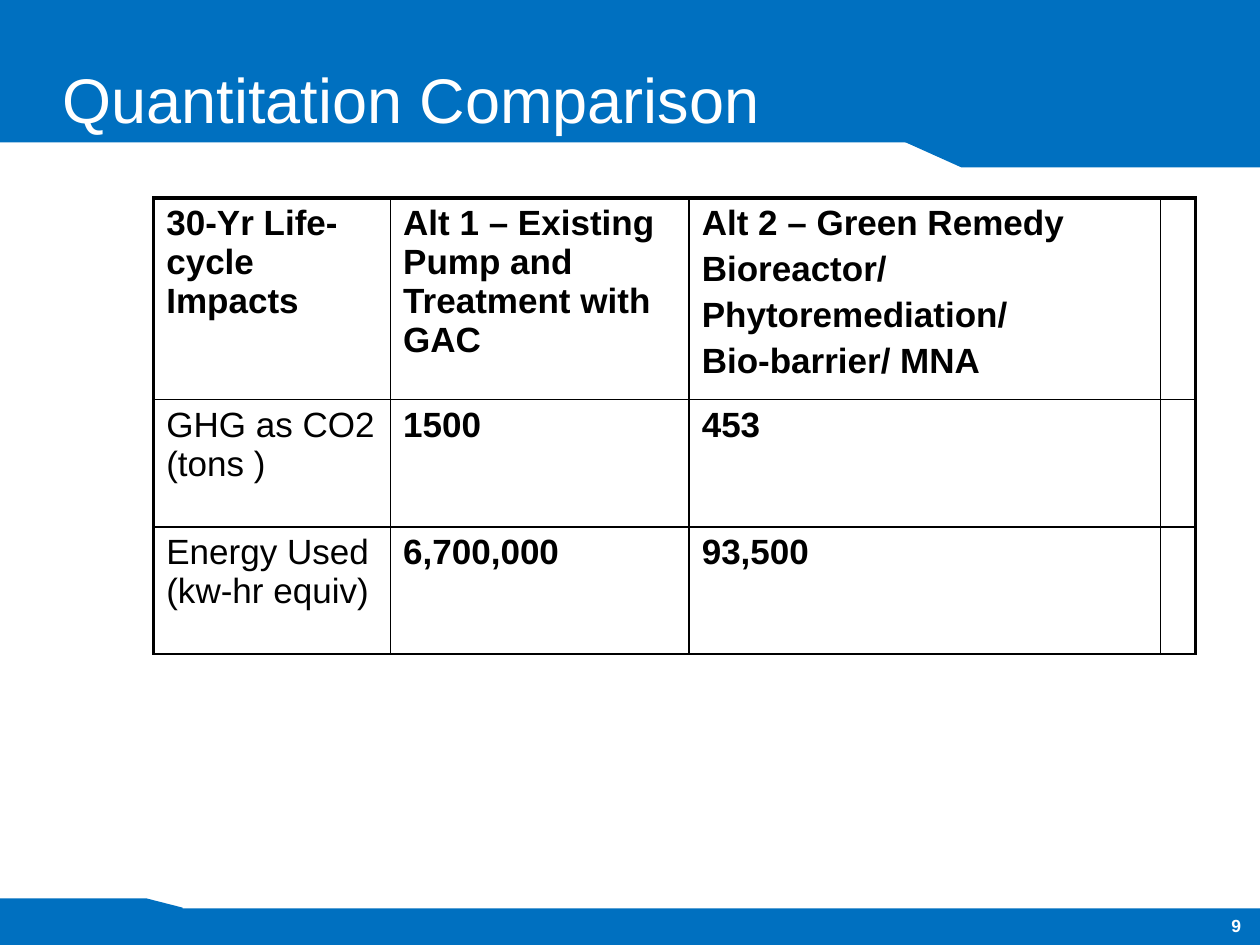
from lxml import etree
from pptx import Presentation
from pptx.dml.color import RGBColor
from pptx.enum.shapes import MSO_SHAPE
from pptx.enum.text import MSO_ANCHOR, PP_ALIGN
from pptx.oxml.ns import qn
from pptx.util import Inches, Pt

COLORS = {"blue": "0070C0", "white": "FFFFFF", "black": "000000"}
THIN, THICK = 1, 2.25

COLUMN_WIDTHS = [1.88, 2.37, 3.74, 0.28]
ROW_HEIGHTS = [1.5, 1.01, 1.01]
ROWS = [
    ["30-Yr Life-cycle Impacts",
     "Alt 1 – Existing Pump and Treatment with GAC",
     "Alt 2 – Green Remedy\nBioreactor/\nPhytoremediation/\nBio-barrier/ MNA", ""],
    ["GHG as CO2 (tons )", "1500", "453", ""],
    ["Energy Used (kw-hr equiv)", "6,700,000", "93,500", ""],
]


class SlideBuilder:
    font = "Arial"

    def __init__(self, slide):
        self.slide = slide

    def color(self, name):
        return RGBColor.from_string(COLORS[name])

    def style(self, p, size, color, bold=False):
        p.font.name = self.font
        p.font.size = Pt(size)
        p.font.bold = bold
        p.font.color.rgb = self.color(color)

    def band(self, kind, x, y, w, h, flip=False, rotation=0):
        sp = self.slide.shapes.add_shape(
            kind, Inches(x), Inches(y), Inches(w), Inches(h))
        sp.shadow.inherit = False
        sp.fill.solid()
        sp.fill.fore_color.rgb = self.color("blue")
        sp.line.fill.background()
        sp.rotation = rotation
        if flip:
            sp._element.spPr.find(qn("a:xfrm")).set("flipV", "1")

    def text(self, text, x, y, w, h, size, bold=False,
             align=PP_ALIGN.LEFT, anchor=MSO_ANCHOR.TOP):
        box = self.slide.shapes.add_textbox(
            Inches(x), Inches(y), Inches(w), Inches(h))
        tf = box.text_frame
        tf.word_wrap = True
        tf.vertical_anchor = anchor
        tf.margin_left = tf.margin_right = tf.margin_top = tf.margin_bottom = 0
        p = tf.paragraphs[0]
        p.text = text
        p.alignment = align
        self.style(p, size, "white", bold)

    def border(self, cell, side, width):
        tc_pr = cell._tc.get_or_add_tcPr()
        ln = etree.SubElement(tc_pr, qn(f"a:ln{side}"), w=str(Pt(width)))
        fill = etree.SubElement(ln, qn("a:solidFill"))
        etree.SubElement(fill, qn("a:srgbClr"), val=COLORS["black"])

    def cell(self, cell, text, bold, widths):
        for side, width in widths.items():
            self.border(cell, side, width)
        cell.fill.background()
        cell.text = text
        for i, p in enumerate(cell.text_frame.paragraphs):
            self.style(p, 20, "black", bold)
            if i:
                p.space_before = Pt(4)

    def table(self, rows, x, y, widths, heights):
        table = self.slide.shapes.add_table(
            len(rows), len(widths), Inches(x), Inches(y),
            Inches(sum(widths)), Inches(sum(heights))).table
        table.first_row = table.horz_banding = False
        for column, width in zip(table.columns, widths):
            column.width = Inches(width)
        for row, height in zip(table.rows, heights):
            row.height = Inches(height)
        # Thick outline on the left, top and right; thin lines elsewhere
        last = len(widths) - 1
        for r, row in enumerate(rows):
            for c, text in enumerate(row):
                sides = {"L": THICK if c == 0 else THIN,
                         "R": THICK if c == last else THIN,
                         "T": THICK if r == 0 else THIN,
                         "B": THIN}
                self.cell(table.cell(r, c), text, r == 0 or c > 0, sides)


def main():
    prs = Presentation()
    prs.slide_width, prs.slide_height = Inches(10), Inches(7.5)
    s = SlideBuilder(prs.slides.add_slide(prs.slide_layouts[6]))

    # Header and footer bands
    s.band(MSO_SHAPE.FLOWCHART_CARD, 7.04, 0, 2.96, 1.33, flip=True)
    s.band(MSO_SHAPE.RECTANGLE, 0, 0, 10, 1.13)
    s.band(MSO_SHAPE.RECTANGLE, 0, 7.21, 10, 0.3)
    s.band(MSO_SHAPE.FLOWCHART_CARD, 0, 7.13, 1.45, 0.37, flip=True, rotation=180)

    # Slide number and title
    s.text("9", 8.99, 7.26, 0.86, 0.17, 10, bold=True, align=PP_ALIGN.RIGHT)
    s.text("Quantitation Comparison", 0.5, 0.3, 9, 0.78, 36,
           anchor=MSO_ANCHOR.BOTTOM)

    # Comparison table
    s.table(ROWS, 1.22, 1.57, COLUMN_WIDTHS, ROW_HEIGHTS)

    prs.save("out.pptx")


if __name__ == "__main__":
    main()
